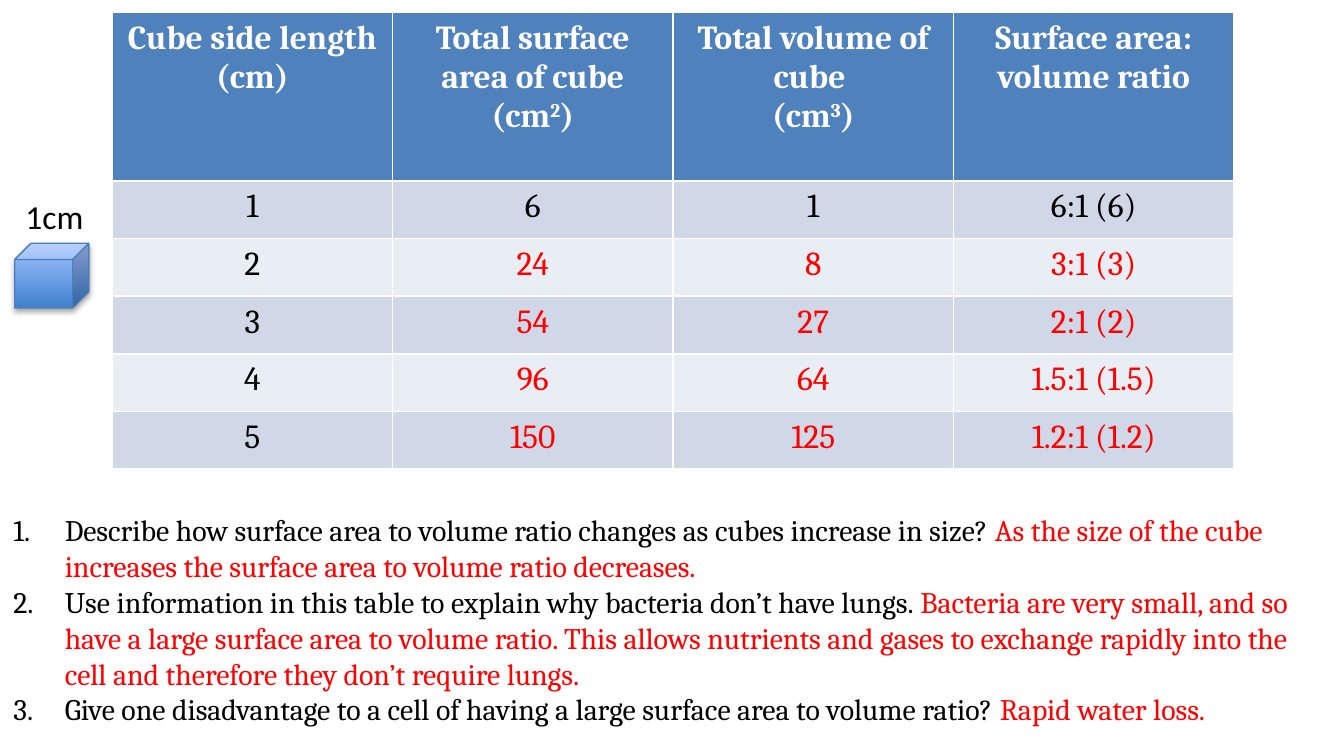
from dataclasses import dataclass

from lxml import etree
from pptx import Presentation
from pptx.dml.color import RGBColor
from pptx.enum import shapes, text
from pptx.oxml.ns import qn
from pptx.util import Cm, Pt

BLACK = RGBColor(0x00, 0x00, 0x00)
WHITE = RGBColor(0xFF, 0xFF, 0xFF)
RED = RGBColor(0xFF, 0x00, 0x00)
HEAD = RGBColor(0x4F, 0x81, 0xBD)
BANDS = (RGBColor(0xD0, 0xD8, 0xE8), RGBColor(0xE9, 0xED, 0xF4))
EDGE = RGBColor(0x4B, 0x7E, 0xBC)
DEEP = RGBColor(0x3F, 0x80, 0xCE)
PALE = RGBColor(0xA4, 0xC4, 0xFF)
SERIF = "Cambria"


@dataclass
class Header:
    name: str
    unit: str = ""
    power: str = ""


@dataclass
class Task:
    ask: str
    answer: str


HEADERS = [
    Header("Cube side length", "cm"),
    Header("Total surface area of cube", "cm", "2"),
    Header("Total volume of cube ", "cm", "3"),
    Header("Surface area: volume ratio"),
]
RATIOS = ["6:1 (6)", "3:1 (3)", "2:1 (2)", "1.5:1 (1.5)", "1.2:1 (1.2)"]
TASKS = [
    Task("Describe how surface area to volume ratio changes as cubes increase in size? ",
         "As the size of the cube increases the surface area to volume ratio decreases."),
    Task("Use information in this table to explain why bacteria don’t have lungs. ",
         "Bacteria are very small, and so have a large surface area to volume ratio. "
         "This allows nutrients and gases to exchange rapidly into the cell and "
         "therefore they don’t require lungs."),
    Task("Give one disadvantage to a cell of having a large surface area to volume ratio? ",
         "Rapid water loss."),
]


def add_run(para, words: str, color: RGBColor, size: int = 18,
            font: str = SERIF, bold: bool = False):
    run = para.add_run()
    run.text = words
    run.font.name, run.font.size, run.font.bold = font, Pt(size), bold
    run.font.color.rgb = color
    return run


def paint(cell, color: RGBColor) -> None:
    cell.fill.solid()
    cell.fill.fore_color.rgb = color


def fill_head(cell, head: Header) -> None:
    paint(cell, HEAD)
    frame = cell.text_frame
    para = frame.paragraphs[0]
    add_run(para, head.name, WHITE, bold=True)
    if head.unit:
        para = frame.add_paragraph()
        if head.power:
            add_run(para, "(" + head.unit, WHITE, bold=True)
            power = add_run(para, head.power, WHITE, bold=True)
            power.font._element.set("baseline", "30000")
            add_run(para, ")", WHITE, bold=True)
        else:
            add_run(para, f"({head.unit})", WHITE, bold=True)
    for para in frame.paragraphs:
        para.alignment = text.PP_ALIGN.CENTER


def draw_table(slide) -> None:
    rows, cols = len(RATIOS) + 1, len(HEADERS)
    table = slide.shapes.add_table(
        rows, cols, Cm(2.12), Cm(0.24), Cm(21.18), Cm(8.63)).table
    for col in table.columns:
        col.width = Cm(5.3)
    for num, row in enumerate(table.rows):
        row.height = Cm(1.09) if num else Cm(3.18)
    for col, head in enumerate(HEADERS):
        fill_head(table.cell(0, col), head)
    for side, ratio in enumerate(RATIOS, 1):
        for col, value in enumerate((side, 6 * side ** 2, side ** 3, ratio)):
            cell = table.cell(side, col)
            paint(cell, BANDS[(side - 1) % 2])
            para = cell.text_frame.paragraphs[0]
            para.alignment = text.PP_ALIGN.CENTER
            given = side == 1 or col == 0
            add_run(para, str(value), BLACK if given else RED)


def draw_tasks(body) -> None:
    body.left, body.top, body.width, body.height = Cm(0), Cm(9.55), Cm(25.4), Cm(4.37)
    frame = body.text_frame
    frame.auto_size = text.MSO_AUTO_SIZE.SHAPE_TO_FIT_TEXT
    for num, task in enumerate(TASKS):
        para = frame.add_paragraph() if num else frame.paragraphs[0]
        para.space_before = Pt(0)
        add_run(para, task.ask, BLACK, 16)
        add_run(para, task.answer, RED, 16)
        props = para._p.get_or_add_pPr()
        props.set("marL", str(Cm(0.97)))
        props.set("indent", str(-Cm(0.97)))
        etree.SubElement(props, qn("a:buFont"), typeface=SERIF)
        etree.SubElement(props, qn("a:buAutoNum"), type="arabicPeriod")


def draw_cube(slide) -> None:
    cube = slide.shapes.add_shape(
        shapes.MSO_SHAPE.CUBE, Cm(0.28), Cm(4.6), Cm(1.4), Cm(1.22))
    cube.fill.gradient()
    cube.fill.gradient_angle = 90
    for stop, color in zip(cube.fill.gradient_stops, (DEEP, PALE)):
        stop.color.rgb = color
    cube.line.color.rgb = EDGE
    cube.line.width = Pt(0.75)
    cube.shadow.inherit = False
    effects = cube._element.spPr.find(qn("a:effectLst"))
    shade = etree.SubElement(
        effects, qn("a:outerShdw"), blurRad=str(Pt(3.1)), dist=str(Pt(1.8)),
        dir="5400000", rotWithShape="0")
    tint = etree.SubElement(shade, qn("a:srgbClr"), val=str(BLACK))
    etree.SubElement(tint, qn("a:alpha"), val="35000")

    label = slide.shapes.add_textbox(Cm(0.23), Cm(3.58), Cm(1.68), Cm(1.02))
    label.text_frame.word_wrap = False
    add_run(label.text_frame.paragraphs[0], "1cm", BLACK, font="Calibri")


def main() -> None:
    deck = Presentation()
    deck.slide_width, deck.slide_height = Cm(25.4), Cm(14.29)
    slide = deck.slides.add_slide(deck.slide_layouts[1])
    title = slide.shapes.title._element
    title.getparent().remove(title)
    draw_table(slide)
    draw_tasks(slide.placeholders[1])
    draw_cube(slide)
    deck.save("out.pptx")


if __name__ == "__main__":
    main()
